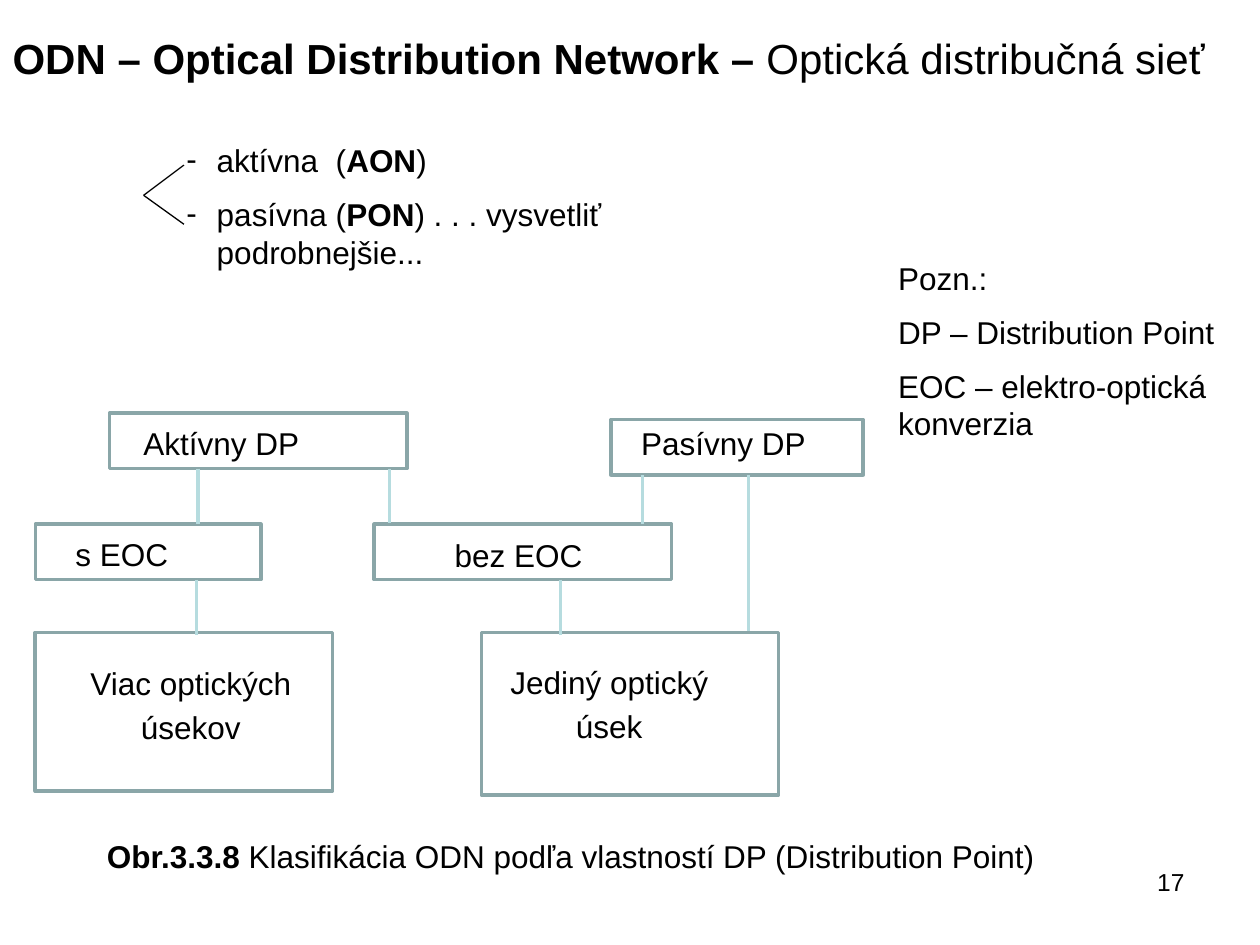
"""Build the slide that classifies optical distribution networks."""
from lxml.etree import SubElement
from pptx import Presentation
from pptx.dml.color import RGBColor
from pptx.enum.shapes import MSO_CONNECTOR, MSO_SHAPE
from pptx.enum.text import MSO_ANCHOR, MSO_AUTO_SIZE, PP_ALIGN
from pptx.oxml.ns import qn
from pptx.util import Inches, Pt

COLOURS = {"text": "000000", "frame": "8AA6A8", "link": "B6DCDF"}

deck = Presentation()
deck.slide_width, deck.slide_height = Inches(10), Inches(7.5)
cell = deck.slide_width // 100
page = deck.slides.add_slide(deck.slide_layouts[1])
shapes = page.shapes


def write(box, area, paragraphs, size=18, **layout):
    """Place a box on the grid and fill it with (text, bold) spans."""
    for name, value in zip(("left", "top", "width", "height"), area):
        setattr(box, name, int(value * cell))
    frame = box.text_frame
    frame_format = {
        "word_wrap": True,
        "auto_size": MSO_AUTO_SIZE.NONE,
        "vertical_anchor": MSO_ANCHOR.TOP,
    }
    for name, value in frame_format.items():
        setattr(frame, name, value)
    for index, spans in enumerate(paragraphs):
        para = frame.add_paragraph() if index else frame.paragraphs[0]
        para_format = {
            "alignment": PP_ALIGN.LEFT,
            "space_before": Pt(size / 2 if index else 0),
            **layout,
        }
        for name, value in para_format.items():
            setattr(para, name, value)
        for text, bold in spans:
            span = para.add_run()
            span.text = text
            font_format = {"name": "Arial", "size": Pt(size), "bold": bold}
            for name, value in font_format.items():
                setattr(span.font, name, value)
            span.font.color.rgb = RGBColor.from_string(COLOURS["text"])


def connect(start, end, colour, weight):
    """Draw a straight line between two grid points."""
    points = [int(value * cell) for value in (*start, *end)]
    line = shapes.add_connector(MSO_CONNECTOR.STRAIGHT, *points)
    line.line.color.rgb = RGBColor.from_string(COLOURS[colour])
    line.line.width = Pt(weight)
    SubElement(line._element.spPr, qn("a:effectLst"))


write(shapes.title, (0, 2.1, 100, 5), [[
    ("ODN – Optical Distribution Network – ", True),
    ("Optická distribučná sieť", False),
]], size=24)

body = shapes.placeholders[1]
write(body, (13.8, 10.7, 51.6, 12), [
    [("aktívna  (", False), ("AON", True), (")", False)],
    [("pasívna (", False), ("PON", True), (") . . . vysvetliť podrobnejšie...", False)],
])
for para in body.text_frame.paragraphs:
    properties = para._p.get_or_add_pPr()
    properties.set("marL", str(Inches(0.24)))
    properties.set("indent", str(-Inches(0.24)))
    SubElement(properties, qn("a:buChar"), char="-")

for branch_row in (13.1, 17.8):
    connect((11.4, 15.5), (14.6, branch_row), "text", 0.75)

notes = ["Pozn.:", "DP – Distribution Point", "EOC – elektro-optická konverzia"]
write(shapes.add_textbox(0, 0, 0, 0), (70.3, 20.1, 29.7, 16.2),
      [[(note, False)] for note in notes])

write(shapes.add_textbox(0, 0, 0, 0), (7.5, 65.9, 81.1, 4), [[
    ("Obr.3.3.8 ", True),
    ("Klasifikácia ODN podľa vlastností DP (Distribution Point)", False),
]])
write(shapes.add_textbox(0, 0, 0, 0), (71.7, 68.3, 23.3, 5.2),
      [[("17", False)]], size=14, alignment=PP_ALIGN.RIGHT)

nodes = [
    ("Aktívny DP", (8.7, 32.8, 23.6, 4.4), (10.4, 32.7, 17.2, 5.9), PP_ALIGN.LEFT),
    ("Pasívny DP", (48.5, 33.3, 20, 4.4), (49.9, 32.7, 18.5, 5.9), PP_ALIGN.LEFT),
    ("s EOC", (2.8, 41.6, 17.9, 4.4), (5, 41.5, 14.4, 5.9), PP_ALIGN.LEFT),
    ("bez EOC", (29.7, 41.6, 23.6, 4.4), (35.1, 41.6, 14.4, 5.9), PP_ALIGN.LEFT),
    ("Viac optických úsekov", (2.8, 50.2, 23.6, 12.6), (5, 51.8, 20.3, 9.7), PP_ALIGN.CENTER),
    ("Jediný optický úsek", (38.2, 50.2, 23.6, 12.9), (38.9, 51.7, 18.9, 9.7), PP_ALIGN.CENTER),
]
for label, outline, text_area, alignment in nodes:
    node = shapes.add_shape(MSO_SHAPE.RECTANGLE, *(int(value * cell) for value in outline))
    node.shadow.inherit = False
    node.fill.background()
    node.line.color.rgb = RGBColor.from_string(COLOURS["frame"])
    node.line.width = Pt(2)
    write(shapes.add_textbox(0, 0, 0, 0), text_area, [[(label, False)]],
          alignment=alignment, line_spacing=1.15, space_after=Pt(10))

links = [
    (15.7, 37.2, 41.6), (30.9, 37.2, 41.5), (51, 37.7, 41.6),
    (15.6, 46, 50.4), (44.5, 46, 50.4), (59.4, 37.7, 50.1),
]
for column, top, bottom in links:
    connect((column, top), (column, bottom), "link", 2)

deck.save("out.pptx")
